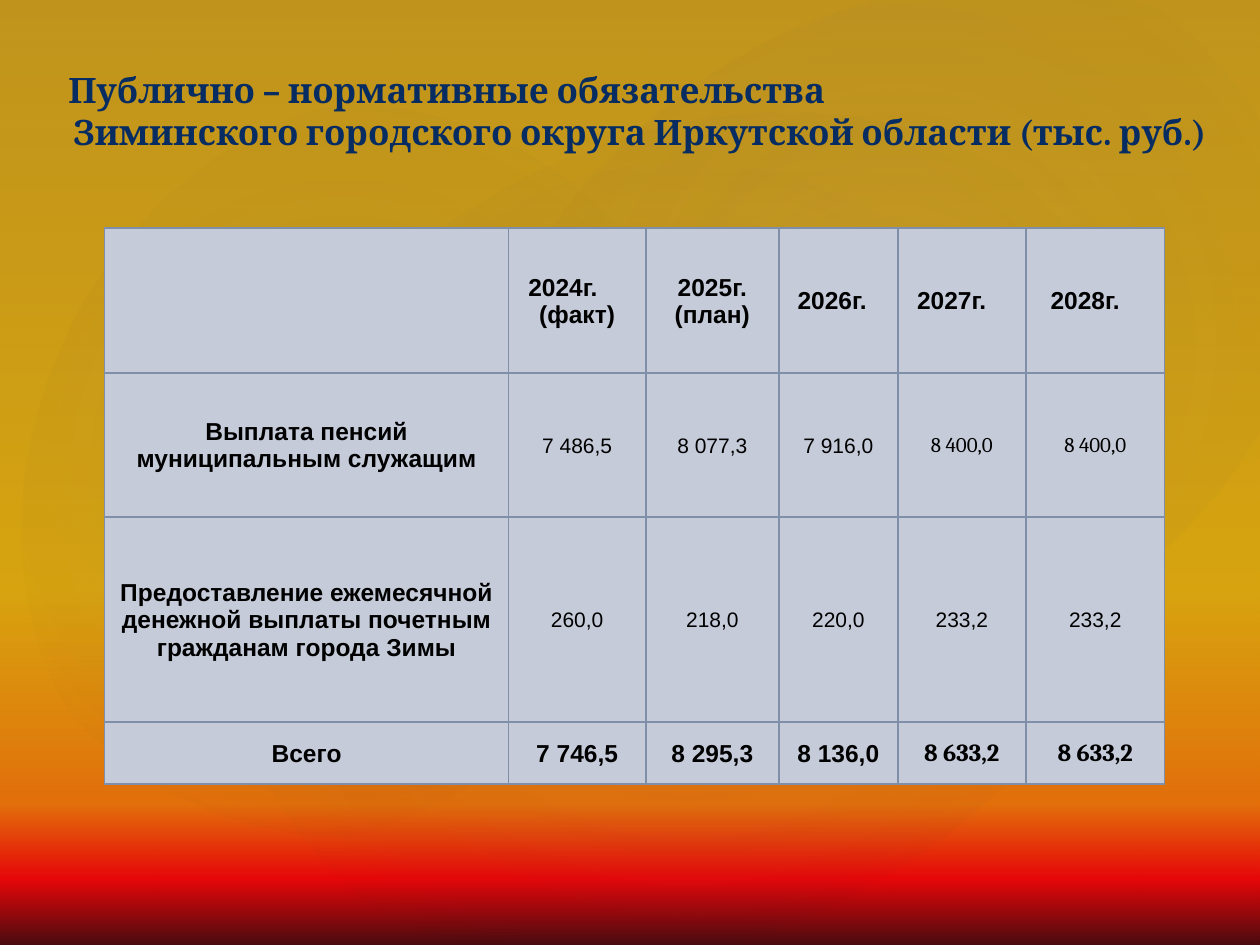
import pptx
import pptx.util
import pptx.dml.color
import pptx.enum.shapes
import pptx.enum.text
import pptx.oxml
import pptx.oxml.ns
from lxml import etree

Cm, Pt = pptx.util.Cm, pptx.util.Pt
SHAPE = pptx.enum.shapes.MSO_SHAPE
ALIGN = pptx.enum.text.PP_ALIGN
MIDDLE = pptx.enum.text.MSO_ANCHOR.MIDDLE
qn = pptx.oxml.ns.qn

CELL_FILL, BORDER, BLACK, NAVY = "C5CBD9", "7F8FA9", "000000", "072C62"
COL_WIDTHS = [8.14, 2.77, 2.68, 2.4, 2.58, 2.8]
ROW_HEIGHTS = [2.92, 2.9, 4.14, 1.24]
ROWS = [
    ["", "2024г.\n(факт)", "2025г.\n(план)", "2026г.", "2027г.", "2028г."],
    ["Выплата пенсий муниципальным служащим",
     "7 486,5", "8 077,3", "7 916,0", "8 400,0", "8 400,0"],
    ["Предоставление ежемесячной денежной выплаты почетным гражданам города Зимы",
     "260,0", "218,0", "220,0", "233,2", "233,2"],
    ["Всего", "7 746,5", "8 295,3", "8 136,0", "8 633,2", "8 633,2"],
]
HEADER_RIGHT_MARGINS = {3: 0.28, 4: 0.44, 5: 0.44}


def rgb(color):
    return pptx.dml.color.RGBColor.from_string(color)


def set_gradient(fill, element, stops, radial=False):
    """Give a fill the stops (position %, colour, opacity %), downwards or from the centre."""
    fill.gradient()
    grad = element.find(".//" + qn("a:gradFill"))
    for child in list(grad):
        grad.remove(child)
    stop_list = etree.SubElement(grad, qn("a:gsLst"))
    for position, color, opacity in stops:
        gs = etree.SubElement(stop_list, qn("a:gs"), pos=str(position * 1000))
        clr = etree.SubElement(gs, qn("a:srgbClr"), val=color)
        if opacity < 100:
            etree.SubElement(clr, qn("a:alpha"), val=str(opacity * 1000))
    if radial:
        circle = etree.SubElement(grad, qn("a:path"), path="circle")
        etree.SubElement(circle, qn("a:fillToRect"),
                         l="50000", t="50000", r="50000", b="50000")
    else:
        etree.SubElement(grad, qn("a:lin"), ang="5400000", scaled="0")


def add_gradient_shape(s, kind, box, stops, rotation=0, radial=False):
    sp = s.shapes.add_shape(kind, *map(Cm, box))
    sp.shadow.inherit = False
    sp.line.fill.background()
    sp.rotation = rotation
    set_gradient(sp.fill, sp._element.spPr, stops, radial)


def add_backdrop(s):
    set_gradient(s.background.fill, s._element,
                 [(62, "FFC000", 100), (85, "FF7A00", 100),
                  (93, "FF0300", 100), (100, "4D0808", 100)])
    add_gradient_shape(s, SHAPE.RECTANGLE, (0, 0, 25.4, 19.05),
                       [(0, "504652", 36), (100, "242852", 10)])
    for box, rotation, opacity in [
        ((3.81, 2.9, 20.12, 15.85), 328.7, 7),
        ((-0.76, 3.25, 15.39, 12.45), 294.3, 8),
        ((9.09, 0.33, 18.01, 13.21), 328.7, 8),
    ]:
        add_gradient_shape(s, SHAPE.OVAL, box,
                           [(0, "C4BCC6", opacity), (58, "242852", 0)],
                           rotation, radial=True)


def add_text(tf, lines, size, font, color, bold, align):
    for i, line in enumerate(lines):
        p = tf.paragraphs[0] if i == 0 else tf.add_paragraph()
        p.alignment = align
        r = p.add_run()
        r.text = line
        r.font.size, r.font.name, r.font.bold = Pt(size), font, bold
        r.font.color.rgb = rgb(color)


def add_title(s):
    sp = s.shapes.add_shape(SHAPE.ROUNDED_RECTANGLE,
                            Cm(0.89), Cm(1.12), Cm(24), Cm(2.21))
    sp.shadow.inherit = False
    sp.fill.background()
    sp.line.fill.background()
    tf = sp.text_frame
    tf.word_wrap = True
    tf.vertical_anchor = MIDDLE
    tf.margin_left, tf.margin_right = Cm(0.38), Cm(0.2)
    add_text(tf, ["Публично – нормативные обязательства",
                  "Зиминского городского округа Иркутской области (тыс. руб.)"],
             20, "Cambria", NAVY, True, ALIGN.LEFT)
    tf.paragraphs[1]._p.get_or_add_pPr().set("marL", str(Cm(0.1)))


def set_borders(cell, widths):
    tc_pr = cell._tc.get_or_add_tcPr()
    for i, (side, width) in enumerate(zip("LRTB", widths)):
        ln = etree.Element(qn("a:ln" + side), w=str(Pt(width)))
        fill = etree.SubElement(ln, qn("a:solidFill"))
        etree.SubElement(fill, qn("a:srgbClr"), val=BORDER)
        tc_pr.insert(i, ln)


def fill_cell(cell, row, col, text):
    last = len(ROWS) - 1
    cell.fill.solid()
    cell.fill.fore_color.rgb = rgb(CELL_FILL)
    cell.vertical_anchor = MIDDLE
    cell.margin_left = cell.margin_right = cell.margin_top = Cm(0.03)
    cell.margin_bottom = 0
    edge = 1.5 if row == last else 1
    set_borders(cell, (1, 1, edge, edge))
    if not text:
        return
    bold = row in (0, last) or col == 0
    font = "Cambria" if row in (1, last) and col >= 4 else "Arial"
    add_text(cell.text_frame, text.split("\n"), 14 if bold else 12, font,
             BLACK, bold, ALIGN.CENTER)


def adjust_header(table):
    """Shift the year labels off the centre of their columns."""
    for col, margin in HEADER_RIGHT_MARGINS.items():
        table.cell(0, col).margin_right = Cm(margin)
    fact = table.cell(0, 1)
    fact.margin_left = Cm(0.4)
    for p, indent in zip(fact.text_frame.paragraphs, (0, 0.22)):
        p.alignment = ALIGN.LEFT
        p._p.get_or_add_pPr().set("marL", str(Cm(indent)))


def add_obligations_table(s):
    table = s.shapes.add_table(len(ROWS), len(COL_WIDTHS), Cm(2.11), Cm(4.6),
                               Cm(sum(COL_WIDTHS)), Cm(sum(ROW_HEIGHTS))).table
    for column, width in zip(table.columns, COL_WIDTHS):
        column.width = Cm(width)
    for row, height in zip(table.rows, ROW_HEIGHTS):
        row.height = Cm(height)
    for i, texts in enumerate(ROWS):
        for j, text in enumerate(texts):
            fill_cell(table.cell(i, j), i, j, text)
    adjust_header(table)


def main():
    prs = pptx.Presentation()
    prs.slide_width, prs.slide_height = Cm(25.4), Cm(19.05)
    s = prs.slides.add_slide(prs.slide_layouts[6])
    add_backdrop(s)
    add_title(s)
    add_obligations_table(s)
    prs.save("out.pptx")


if __name__ == "__main__":
    main()
